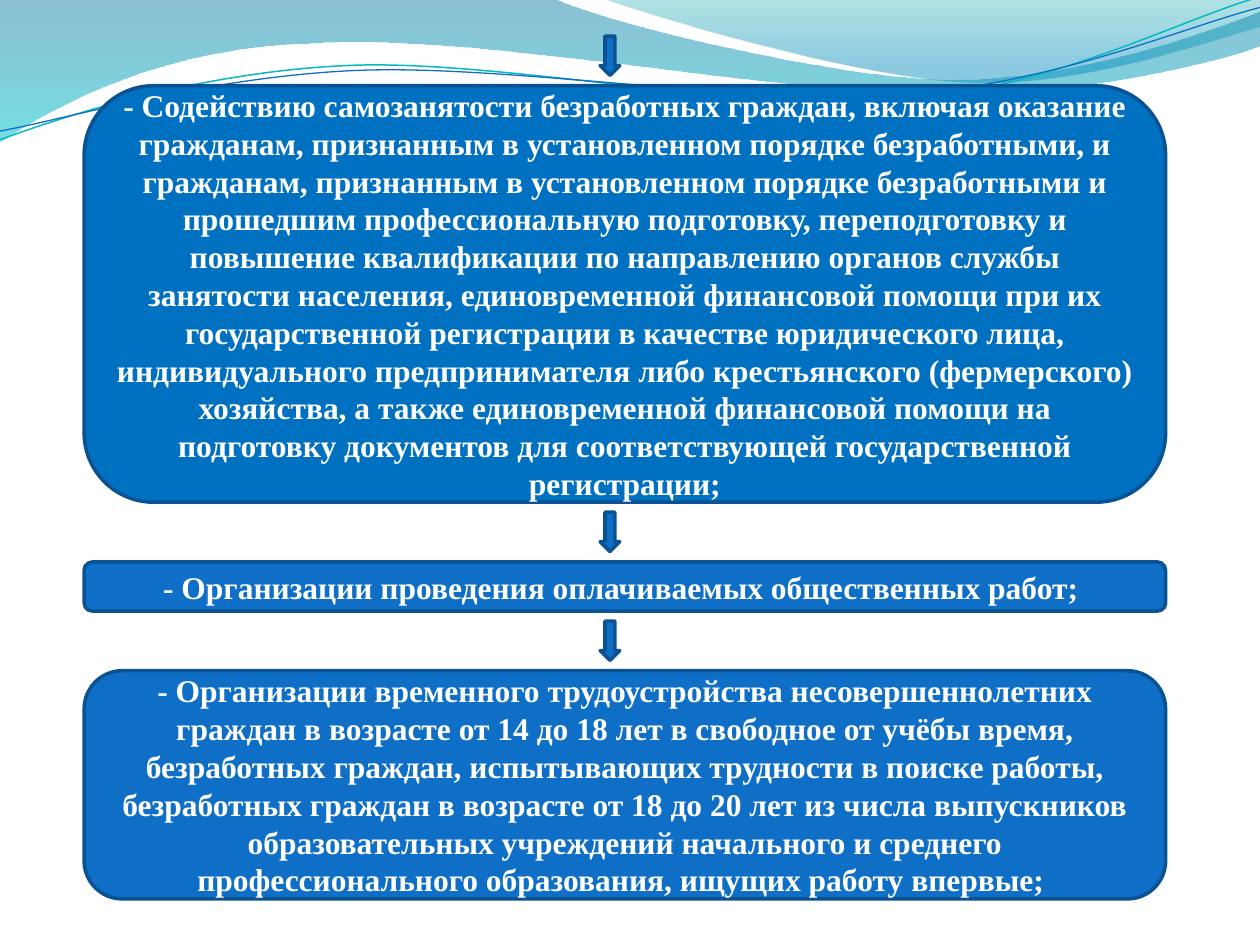
from dataclasses import dataclass
from math import cos, radians, sin
from lxml.etree import SubElement
from pptx import Presentation
from pptx.dml.color import RGBColor
from pptx.enum.shapes import MSO_SHAPE
from pptx.enum.text import MSO_ANCHOR, PP_ALIGN
from pptx.oxml.ns import qn
from pptx.util import Pt


@dataclass(frozen=True)
class Theme:
    font: str = "Times New Roman"
    size: float = 18
    text: str = "FFFFFF"
    lead: str = "0070C0"
    accent: str = "0F6FC6"
    border: str = "0B5292"
    teal: str = "0AB8BF"
    border_width: float = 2
    wide_wave: tuple = ((0, "0074A1", 45), (1, "00C6CF", 55))
    right_wave: tuple = ((0, "00A1A9", 30), (0.8, "008BBF", 45))


def rgb(value):
    return RGBColor.from_string(value)


def turn(x, y, degrees):
    a = radians(degrees)
    return x * cos(a) - y * sin(a), x * sin(a) + y * cos(a)


class SlideBuilder:
    def __init__(self, slide, theme):
        self.s = slide
        self.theme = theme

    def outline(self, sp, color, width):
        sp.line.color.rgb = rgb(color)
        sp.line.width = Pt(width)

    def curve(self, start, segments, closed, tilt=0):
        paths = []
        for seg in [start, *segments]:
            turned = [turn(x, y, -tilt) for x, y in zip(seg[::2], seg[1::2])]
            paths.append([(Pt(x), Pt(y)) for x, y in turned])
        builder = self.s.shapes.build_freeform(*paths[0][-1])
        builder.add_line_segments([pts[-1] for pts in paths[1:]], close=closed)
        sp = builder.convert_to_shape()
        sp.shadow.inherit = False
        for node, pts in zip(list(sp._element.iter(qn("a:lnTo"))), paths[1:]):
            if len(pts) == 3:
                node.tag = qn("a:cubicBezTo")
                for i, (x, y) in enumerate(pts[:2]):
                    node.insert(i, node.makeelement(
                        qn("a:pt"), {"x": str(x - sp.left), "y": str(y - sp.top)}))
        x, y = turn(sp.left + sp.width / 2, sp.top + sp.height / 2, tilt)
        sp.left, sp.top = round(x - sp.width / 2), round(y - sp.height / 2)
        sp.rotation = tilt
        return sp

    def send_to_master(self, sp):
        tree = self.s.slide_layout.slide_master.shapes._spTree
        sp._element.nvSpPr.cNvPr.id = 100 + len(tree)
        tree.append(sp._element)

    def wave(self, start, segments, stops):
        sp = self.curve(start, segments, True)
        sp.line.fill.background()
        sp.fill.gradient()
        sp.fill.gradient_angle = 270
        for stop, (position, color, _) in zip(sp.fill.gradient_stops, stops):
            stop.position = position
            stop.color.rgb = rgb(color)
        for clr, (_, _, opacity) in zip(sp._element.spPr.iter(qn("a:srgbClr")), stops):
            SubElement(clr, qn("a:alpha"), val=str(opacity * 1000))
        self.send_to_master(sp)

    def strand(self, start, segments, color, width):
        sp = self.curve(start, segments, False, tilt=-2.7)
        sp.fill.background()
        self.outline(sp, color, width)
        self.send_to_master(sp)

    def preset(self, kind, left, top, width, height, fill):
        sp = self.s.shapes.add_shape(kind, Pt(left), Pt(top), Pt(width), Pt(height))
        sp.shadow.inherit = False
        sp.fill.solid()
        sp.fill.fore_color.rgb = rgb(fill)
        self.outline(sp, self.theme.border, self.theme.border_width)
        return sp

    def box(self, left, top, width, height, fill, text):
        sp = self.preset(MSO_SHAPE.ROUNDED_RECTANGLE, left, top, width, height, fill)
        tf = sp.text_frame
        tf.word_wrap = True
        tf.vertical_anchor = MSO_ANCHOR.MIDDLE
        p = tf.paragraphs[0]
        p.alignment = PP_ALIGN.CENTER
        r = p.add_run()
        r.text = text
        formats = {"name": self.theme.font, "size": Pt(self.theme.size), "bold": True}
        for name, value in formats.items():
            setattr(r.font, name, value)
        r.font.color.rgb = rgb(self.theme.text)

    def arrow(self, left, top):
        self.preset(MSO_SHAPE.DOWN_ARROW, left, top, 11.25, 22.5, self.theme.accent)


def main():
    prs = Presentation()
    prs.slide_width, prs.slide_height = Pt(720), Pt(540)
    theme = Theme()
    page = SlideBuilder(prs.slides.add_slide(prs.slide_layouts[6]), theme)

    page.wave((0, 0), [
        (316.8, -0.7),
        (342.7, 12.2, 478.1, 45.4, 545.8, 45.4),
        (614.2, 45.4, 689.8, 18.7, 720, 6.5),
        (720.7, 25.9),
        (707.8, 31.7, 626.4, 54.7, 537.1, 54),
        (447.8, 54, 275, 20.2, 185, 24.5),
        (92.9, 25.9, 33.1, 59.8, -0.7, 81.4),
    ], theme.wide_wave)
    page.wave((344.9, -0.7), [
        (366.5, 7.9, 491, 44.6, 553.7, 46.8),
        (616.3, 49.7, 691.9, 23, 720, 15.1),
        (720, 0),
    ], theme.right_wave)
    page.strand((0, 79.9), [
        (34.6, 67, 113.8, 41, 199.4, 37.4),
        (284.4, 33.8, 427, 64.1, 513.4, 57.6),
        (599.8, 51.1, 675.4, 10.8, 718.6, -1.4),
    ], theme.teal, 0.85)
    page.strand((0, 74.9), [
        (33.8, 69.1, 118.1, 43.9, 203.8, 40.3),
        (290.2, 36.7, 429.8, 60.5, 516.2, 54),
        (601.9, 48.2, 677.5, 15.1, 720, 4.3),
    ], theme.accent, 0.75)

    measures = [
        (238, theme.lead,
         "- Содействию самозанятости безработных граждан, включая оказание гражданам, "
         "признанным в установленном порядке безработными, и гражданам, признанным в "
         "установленном порядке безработными и прошедшим профессиональную подготовку, "
         "переподготовку и повышение квалификации по направлению органов службы занятости "
         "населения, единовременной финансовой помощи при их государственной регистрации "
         "в качестве юридического лица, индивидуального предпринимателя либо крестьянского "
         "(фермерского) хозяйства, а также единовременной финансовой помощи на подготовку "
         "документов для соответствующей государственной регистрации;"),
        (28.1, theme.accent, "- Организации проведения оплачиваемых общественных работ; "),
        (130.4, theme.accent,
         "- Организации временного трудоустройства несовершеннолетних граждан в возрасте "
         "от 14 до 18 лет в свободное от учёбы время, безработных граждан, испытывающих "
         "трудности в поиске работы, безработных граждан в возрасте от 18 до 20 лет из "
         "числа выпускников образовательных учреждений начального и среднего "
         "профессионального образования, ищущих работу впервые; "),
    ]
    top, gap, arrow_rise = 49, 34.1, 28.4
    for height, fill, text in measures:
        page.arrow(342.9, top - arrow_rise)
        page.box(48.1, top, 618, height, fill, text)
        top += height + gap

    prs.save("out.pptx")


if __name__ == "__main__":
    main()
